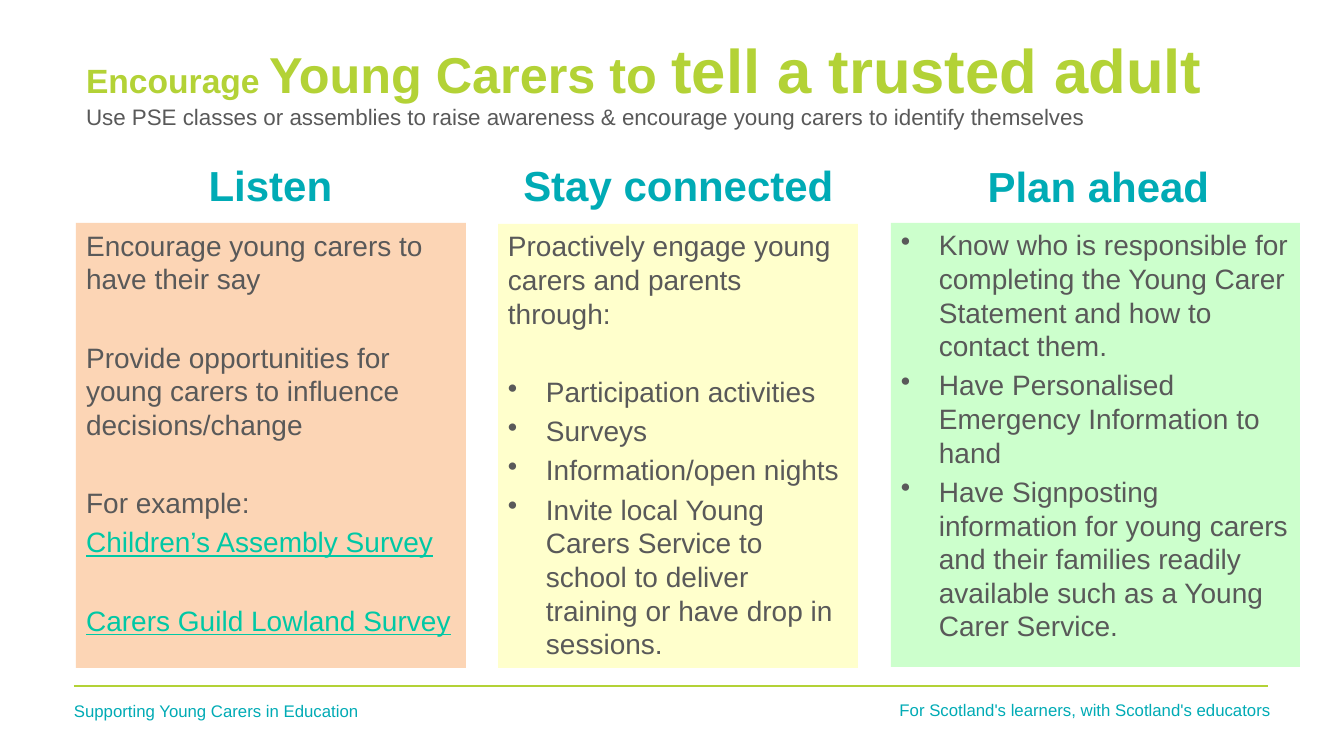
"""Builds a slide on encouraging young carers to tell a trusted adult."""
import dataclasses

import lxml.etree
import pptx
import pptx.dml.color
import pptx.enum.shapes
import pptx.enum.text
import pptx.oxml.ns
import pptx.util

TITLE = [("Encourage ", 24), ("Young Carers to ", 36), ("tell a trusted adult", 44)]
SUBTITLE = "Use PSE classes or assemblies to raise awareness & encourage young carers to identify themselves"
COLUMNS = [
    {"heading": "Listen", "heading_at": (103, 145), "card": (76, 223, 390, 445), "fill": "FCD5B5",
     "items": [
         ("text", "Encourage young carers to have their say"),
         ("spaced", "Provide opportunities for young carers to influence decisions/change"),
         ("spaced", "For example:"),
         ("link", "Children’s Assembly Survey"),
         ("spaced link", "Carers Guild Lowland Survey"),
     ]},
    {"heading": "Stay connected", "heading_at": (511, 145), "card": (498, 224, 360, 444), "fill": "FFFFCC",
     "items": [
         ("text", "Proactively engage young carers and parents through:"),
         ("spaced bullet", "Participation activities"),
         ("bullet", "Surveys"),
         ("bullet", "Information/open nights"),
         ("bullet", "Invite local Young Carers Service to school to deliver training or have drop in sessions."),
     ]},
    {"heading": "Plan ahead", "heading_at": (931, 146), "card": (891, 223, 409, 444), "fill": "CCFFCC",
     "items": [
         ("bullet", "Know who is responsible for completing the Young Carer Statement and how to contact them."),
         ("bullet", "Have Personalised Emergency Information to hand"),
         ("bullet", "Have Signposting information for young carers and their families readily "
                    "available such as a Young Carer Service."),
     ]},
]
ALIGN = pptx.enum.text.PP_ALIGN
ANCHOR = pptx.enum.text.MSO_ANCHOR
FOOTERS = [
    ("Supporting Young Carers in Education", (64, 696, 334, 30), ALIGN.LEFT),
    ("For Scotland's learners, with Scotland's educators", (815, 695, 466, 30), ALIGN.RIGHT),
]
HEADING_SIZE = (335, 79)
TITLE_BOX = (76, 27, 1224, 109)
RULE = (74, 686, 1268, 686)
BULLET_INDENT = 38


@dataclasses.dataclass(frozen=True)
class Theme:
    font: str = "Arial"
    teal: str = "00ABB5"
    lime: str = "B3D236"
    grey: str = "595959"
    link: str = "00C8A5"
    heading: int = 30
    body: int = 20
    body_gap: int = 4
    section_gap: int = 32
    subtitle: int = 16
    subtitle_line: int = 17
    footer: int = 12


THEME = Theme()


def px(length):
    """Turn pixels into EMU."""
    return pptx.util.Emu(round(length * 914400 / 100.8))


def color(code):
    """Return an RGB colour."""
    return pptx.dml.color.RGBColor.from_string(code)


def style(paragraph, size, code, bold=False, align=ALIGN.LEFT):
    """Format a whole paragraph."""
    paragraph.alignment = align
    font = paragraph.font
    font.name, font.size, font.bold = THEME.font, pptx.util.Pt(size), bold
    font.color.rgb = color(code)


def place(shape, box):
    """Move and size a shape."""
    shape.left, shape.top, shape.width, shape.height = map(px, box)


def set_frame(shape, anchor):
    """Set wrapping and anchoring, and return the text frame."""
    frame = shape.text_frame
    frame.word_wrap = True
    frame.auto_size = pptx.enum.text.MSO_AUTO_SIZE.NONE
    frame.vertical_anchor = anchor
    return frame


def add_label(slide, text, box, size, anchor, bold, align):
    """Add a one-line teal text box."""
    frame = set_frame(slide.shapes.add_textbox(*map(px, box)), anchor)
    frame.text = text
    style(frame.paragraphs[0], size, THEME.teal, bold, align)


def set_bullet(paragraph, bulleted):
    """Turn the bullet of a paragraph on or off."""
    properties = paragraph._p.get_or_add_pPr()
    indent = px(BULLET_INDENT) if bulleted else 0
    properties.set("marL", str(indent))
    properties.set("indent", str(-indent))
    tag = "a:buChar" if bulleted else "a:buNone"
    bullet = lxml.etree.SubElement(properties, pptx.oxml.ns.qn(tag))
    if bulleted:
        bullet.set("char", "•")


def fill_title(title):
    """Write the title and its subtitle."""
    place(title, TITLE_BOX)
    frame = set_frame(title, ANCHOR.TOP)
    headline = frame.paragraphs[0]
    for text, size in TITLE:
        run = headline.add_run()
        run.text = text
        run.font.size = pptx.util.Pt(size)
    style(headline, TITLE[-1][1], THEME.lime, bold=True)
    subtitle = frame.add_paragraph()
    subtitle.text = SUBTITLE
    subtitle.line_spacing = pptx.util.Pt(THEME.subtitle_line)
    style(subtitle, THEME.subtitle, THEME.grey)


def fill_card(card, column):
    """Colour a card and write its items."""
    card.fill.solid()
    card.fill.fore_color.rgb = color(column["fill"])
    card.line.fill.background()
    frame = set_frame(card, ANCHOR.TOP)
    for index, (kind, text) in enumerate(column["items"]):
        paragraph = frame.add_paragraph() if index else frame.paragraphs[0]
        paragraph.text = text
        set_bullet(paragraph, "bullet" in kind)
        gap = THEME.section_gap if "spaced" in kind else THEME.body_gap
        paragraph.space_before = pptx.util.Pt(gap)
        is_link = "link" in kind
        style(paragraph, THEME.body, THEME.link if is_link else THEME.grey)
        paragraph.font.underline = is_link


def add_rule(slide):
    """Add the line above the footers."""
    rule = slide.shapes.add_connector(pptx.enum.shapes.MSO_CONNECTOR.STRAIGHT, *map(px, RULE))
    rule.line.color.rgb = color(THEME.lime)
    rule.line.width = pptx.util.Pt(0.75)
    lxml.etree.SubElement(rule._element.spPr, pptx.oxml.ns.qn("a:effectLst"))


def main():
    """Build and save the slide."""
    presentation = pptx.Presentation()
    presentation.slide_width, presentation.slide_height = px(1344), px(756)
    slide = presentation.slides.add_slide(presentation.slide_layouts[1])
    add_rule(slide)
    for text, box, align in FOOTERS:
        add_label(slide, text, box, THEME.footer, ANCHOR.TOP, False, align)
    for index, column in enumerate(COLUMNS):
        if index == 0:
            card = slide.placeholders[1]
            place(card, column["card"])
        else:
            card = slide.shapes.add_shape(
                pptx.enum.shapes.MSO_SHAPE.RECTANGLE, *map(px, column["card"]))
            card.shadow.inherit = False
        fill_card(card, column)
        add_label(slide, column["heading"], column["heading_at"] + HEADING_SIZE,
                  THEME.heading, ANCHOR.MIDDLE, True, ALIGN.CENTER)
    fill_title(slide.shapes.title)
    presentation.save("out.pptx")


if __name__ == "__main__":
    main()
